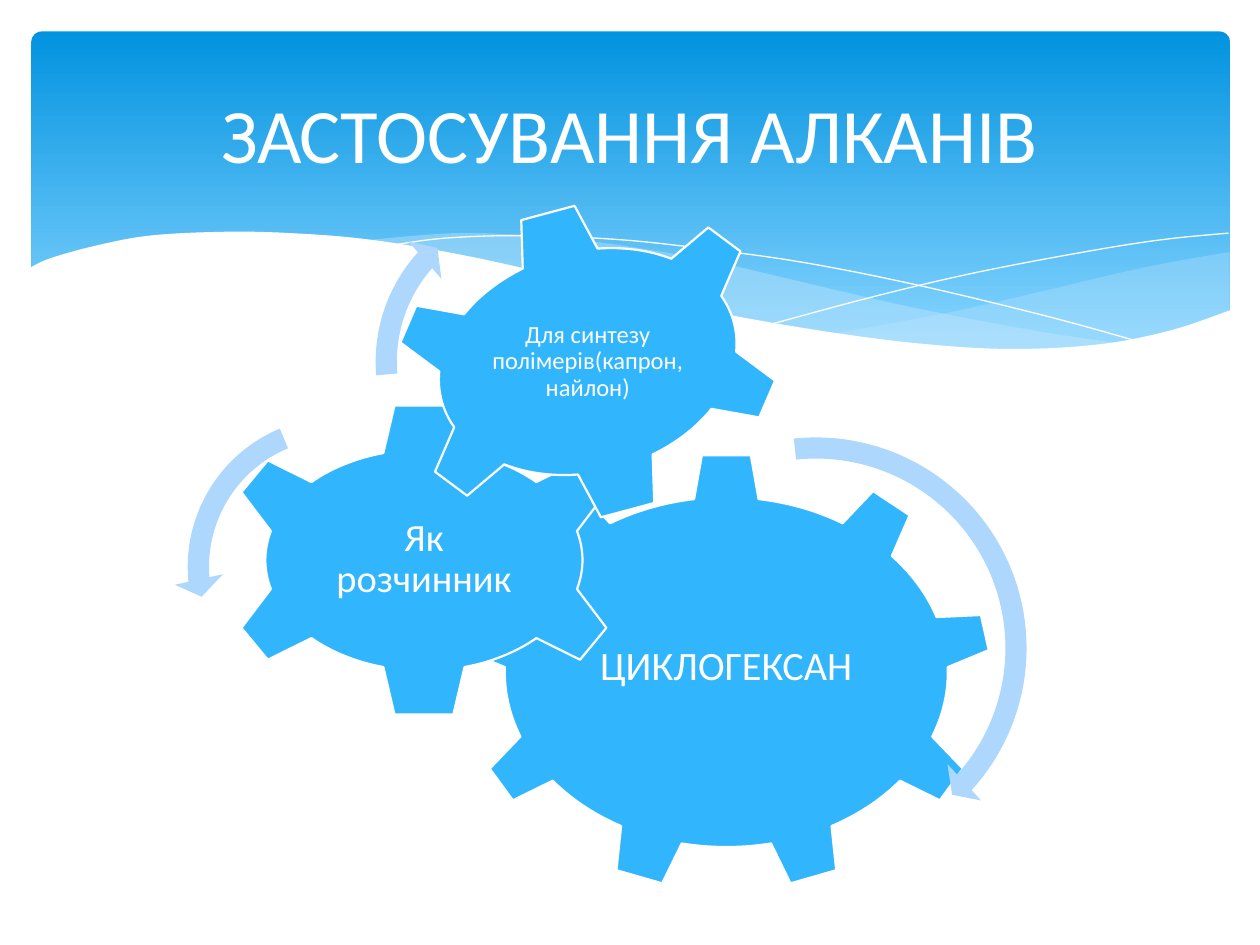
from dataclasses import dataclass

from lxml import etree
from pptx import Presentation
from pptx.dml.color import RGBColor
from pptx.enum.shapes import MSO_SHAPE
from pptx.enum.text import MSO_ANCHOR, PP_ALIGN
from pptx.oxml.ns import qn
from pptx.util import Inches, Pt

ROUNDED = MSO_SHAPE.ROUNDED_RECTANGLE
GEAR_6, GEAR_9 = MSO_SHAPE.GEAR_6, MSO_SHAPE.GEAR_9
ARROW_RIGHT = MSO_SHAPE.CIRCULAR_ARROW
ARROW_LEFT = MSO_SHAPE.LEFT_CIRCULAR_ARROW
CENTER, MIDDLE = PP_ALIGN.CENTER, MSO_ANCHOR.MIDDLE

COLUMNS, ROWS = 10, 7.5  # one grid cell is one inch square
ANGLE_UNIT = 0.6  # adjustment value of one degree
CURVE_STEPS = 6

Point = tuple[float, float]
Box = tuple[float, float, float, float]


@dataclass(frozen=True)
class Theme:
    font: str = "Calibri"
    white: str = "FFFFFF"
    gear: str = "31B6FD"
    arrow: str = "AED7FE"
    ribbon: str = "C6E7FC"
    banner_top: str = "0293E0"
    banner_bottom: str = "83D3FE"
    title_size: float = 44
    gear_outline: float = 1.25


@dataclass(frozen=True)
class Gear:
    kind: MSO_SHAPE
    box: Box
    text_box: Box
    text: str
    size: float
    rotation: float = 0


@dataclass(frozen=True)
class Arrow:
    """A curved arrow: thickness and head in percent, angles in degrees."""
    kind: MSO_SHAPE
    box: Box
    thickness: float
    head_angle: float
    end_angle: float
    start_angle: float
    head_width: float


@dataclass(frozen=True)
class Ribbon:
    edges: tuple[list[Point], ...]
    color: str
    opacity: int = 100


THEME = Theme()

RIBBONS = [
    Ribbon((
        [(9.76, 2), (9.35, 2.07), (8.91, 2.16), (8.32, 2.3), (7.53, 2.48), (6.61, 2.65)],
        [(6.61, 2.65), (7.05, 2.71), (7.57, 2.76), (8.03, 2.78), (8.54, 2.76),
         (8.97, 2.7), (9.35, 2.62), (9.76, 2.47)],
    ), THEME.ribbon, 29),
    Ribbon((
        [(8.93, 2.73), (8.37, 2.65), (7.75, 2.54), (7.06, 2.4), (6.29, 2.22), (5.69, 2.08),
         (5.14, 1.98), (4.65, 1.91), (4.2, 1.87), (3.61, 1.85), (2.86, 1.91)],
        [(2.86, 1.91), (3.62, 2.03), (4.49, 2.22), (5.3, 2.4), (6.01, 2.55), (6.65, 2.66),
         (7.22, 2.74), (7.73, 2.77), (8.18, 2.78), (8.93, 2.73)],
    ), THEME.ribbon, 40),
]
FINE_LINES = [
    [(3.09, 1.95), (3.53, 1.89), (4.16, 1.87), (4.89, 1.9), (5.56, 1.97), (6.36, 2.08),
     (7.27, 2.26), (8.31, 2.51), (9.07, 2.72)],
    [(6.13, 2.57), (6.95, 2.35), (7.76, 2.16), (8.66, 1.99), (9.24, 1.9), (9.75, 1.85)],
]
WHITE_WAVE = Ribbon((
    [(9.77, 2.46), (9.3, 2.62), (8.75, 2.73), (8.09, 2.77), (7.44, 2.74), (6.68, 2.65),
     (5.79, 2.5), (5.03, 2.33), (4.47, 2.2), (3.65, 2.02), (2.92, 1.9), (2.3, 1.85),
     (1.77, 1.84), (1.19, 1.87), (0.76, 1.95), (0.4, 2.05), (0.23, 2.13)],
    [(0.23, 3.29), (9.77, 3.29)],
), THEME.white)

GEARS = [
    Gear(GEAR_9, (3.66, 3.6, 4.21, 3.47), (4.45, 4.41, 2.63, 1.78), "ЦИКЛОГЕКСАН", 23),
    Gear(GEAR_6, (1.73, 3.19, 3.27, 2.51), (2.47, 3.82, 1.79, 1.24), "Як розчинник", 22),
    Gear(GEAR_6, (3.09, 1.62, 3.15, 2.5), (3.82, 2.13, 1.69, 1.48),
         "Для синтезу полімерів(капрон, найлон)", 14, 345),
]
ARROWS = [
    Arrow(ARROW_RIGHT, (4.69, 3.36, 3.57, 3.57), 4.7, 4.98, 42.1, 264.01, 5.5),
    Arrow(ARROW_LEFT, (1.38, 3.2, 2.6, 2.6), 6.5, 7.17, 174.82, 247.3, 7.5),
    Arrow(ARROW_RIGHT, (2.87, 1.47, 2.8, 2.8), 6, 6.57, 221.9, 175.14, 7),
]


def rgb(color: str) -> RGBColor:
    return RGBColor.from_string(color)


def smooth(knots: list[Point]) -> list[Point]:
    """Points of a Catmull-Rom curve that passes through the knots."""
    padded = [knots[0], *knots, knots[-1]]
    points = [knots[0]]
    for a, b, c, d in zip(padded, padded[1:], padded[2:], padded[3:]):
        for step in range(1, CURVE_STEPS + 1):
            t = step / CURVE_STEPS
            x, y = (
                (2 * q + (r - p) * t + (2 * p - 5 * q + 4 * r - s) * t**2
                 + (3 * q - p - 3 * r + s) * t**3) / 2
                for p, q, r, s in zip(a, b, c, d)
            )
            points.append((x, y))
    return points


def add_outline(slide, points: list[Point], closed: bool):
    vertices = [(Inches(x), Inches(y)) for x, y in points]
    builder = slide.shapes.build_freeform(*vertices[0])
    builder.add_line_segments(vertices[1:], close=closed)
    shape = builder.convert_to_shape()
    shape.shadow.inherit = False
    return shape


def add_ribbon(slide, ribbon: Ribbon) -> None:
    points = [point for edge in ribbon.edges for point in smooth(edge)]
    shape = add_outline(slide, points, closed=True)
    shape.line.fill.background()
    shape.fill.solid()
    shape.fill.fore_color.rgb = rgb(ribbon.color)
    if ribbon.opacity < 100:
        color = shape.fill._xPr.find(".//" + qn("a:srgbClr"))
        etree.SubElement(color, qn("a:alpha")).set("val", str(ribbon.opacity * 1000))


def add_fine_line(slide, knots: list[Point]) -> None:
    shape = add_outline(slide, smooth(knots), closed=False)
    shape.fill.background()
    shape.line.color.rgb = rgb(THEME.white)
    shape.line.width = Pt(0)


def add_preset(slide, kind: MSO_SHAPE, box: Box, color: str):
    shape = slide.shapes.add_shape(kind, *map(Inches, box))
    shape.shadow.inherit = False
    shape.fill.solid()
    shape.fill.fore_color.rgb = rgb(color)
    shape.line.fill.background()
    return shape


def add_banner(slide) -> None:
    shape = add_preset(slide, ROUNDED, (0.25, 0.25, 9.51, 2.7), THEME.banner_top)
    shape.adjustments[0] = 0.03
    shape.fill.gradient()
    shape.fill.gradient_angle = 270
    stops = zip(shape.fill.gradient_stops, (0, 0.9), (THEME.banner_top, THEME.banner_bottom))
    for stop, position, color in stops:
        stop.position = position
        stop.color.rgb = rgb(color)


def add_text(slide, box: Box, text: str, size: float, spacing: float, inset: float) -> None:
    frame = slide.shapes.add_textbox(*map(Inches, box)).text_frame
    frame.word_wrap = True
    frame.vertical_anchor = MIDDLE
    frame.margin_left = frame.margin_right = Inches(inset)
    frame.margin_top = frame.margin_bottom = Inches(inset)
    frame.text = text
    paragraph = frame.paragraphs[0]
    paragraph.alignment = CENTER
    paragraph.line_spacing = spacing
    font = paragraph.runs[0].font
    font.name, font.size = THEME.font, Pt(size)
    font.color.rgb = rgb(THEME.white)


def add_gear(slide, gear: Gear) -> None:
    shape = add_preset(slide, gear.kind, gear.box, THEME.gear)
    shape.rotation = gear.rotation
    shape.line.color.rgb = rgb(THEME.white)
    shape.line.width = Pt(THEME.gear_outline)
    add_text(slide, gear.text_box, gear.text, gear.size, spacing=0.9, inset=0.03)


def add_arrow(slide, arrow: Arrow) -> None:
    shape = add_preset(slide, arrow.kind, arrow.box, THEME.arrow)
    angles = (arrow.head_angle, arrow.end_angle, arrow.start_angle)
    values = [arrow.thickness / 100, *(a * ANGLE_UNIT for a in angles), arrow.head_width / 100]
    for index, value in enumerate(values):
        shape.adjustments[index] = value


def main() -> None:
    presentation = Presentation()
    presentation.slide_width, presentation.slide_height = Inches(COLUMNS), Inches(ROWS)
    slide = presentation.slides.add_slide(presentation.slide_layouts[6])
    add_banner(slide)
    for ribbon in RIBBONS:
        add_ribbon(slide, ribbon)
    for knots in FINE_LINES:
        add_fine_line(slide, knots)
    add_ribbon(slide, WHITE_WAVE)
    for gear in GEARS:
        add_gear(slide, gear)
    for arrow in ARROWS:
        add_arrow(slide, arrow)
    add_text(slide, (0.5, 0.37, 9, 1.37), "ЗАСТОСУВАННЯ АЛКАНІВ", THEME.title_size,
             spacing=1, inset=0.05)
    presentation.save("out.pptx")


if __name__ == "__main__":
    main()
